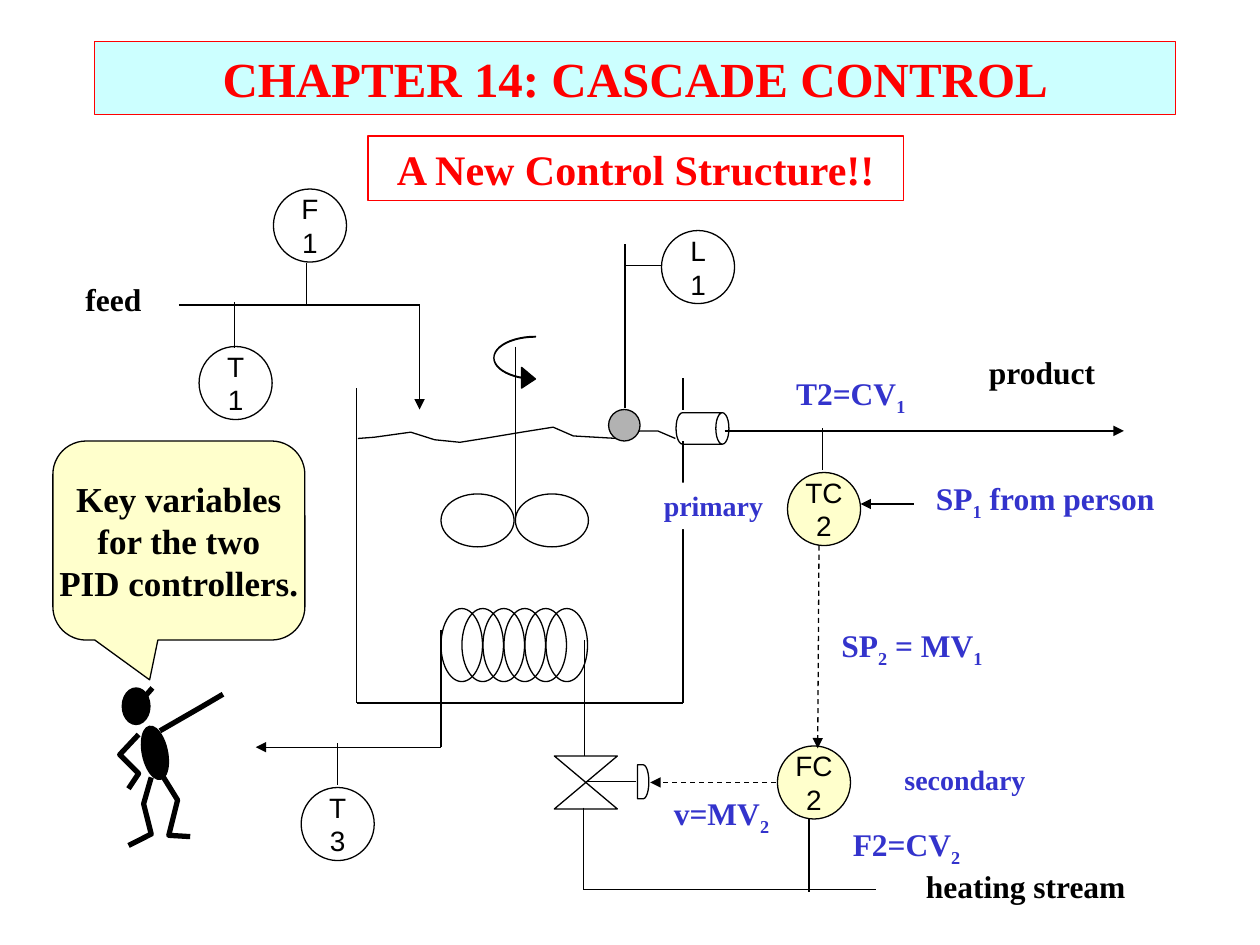
from lxml import etree
from pptx import Presentation
from pptx import util as u
from pptx.dml.color import RGBColor
from pptx.enum import dml, shapes, text
from pptx.oxml import ns

BLACK, RED, BLUE, CREAM, WHITE = "000000", "FF0000", "3333CC", "FFFFCC", "FFFFFF"
SERIF, SANS = "Times New Roman", "Arial"
FORMS = shapes.MSO_SHAPE

TANK = [(2.83, 3.08), (2.83, 5.58), (5.42, 5.58), (5.42, 3.5)]
FEED = [(1.42, 2.42), (3.33, 2.42), (3.33, 3.25)]
COIL_OUTLET = [(3.5, 5), (3.5, 5.93), (2.03, 5.93)]
HEATING = [(4.63, 6.41), (4.63, 7.06), (6.95, 7.06)]
PRODUCT = [(5.75, 3.42), (8.92, 3.42)]
SETPOINT = [(7.25, 4), (6.83, 4)]
LEVEL_TAP = [(5.25, 2.11), (4.96, 2.11)]
VALVE_STEM = [(4.65, 6.2), (5.05, 6.2)]
CASCADE_SIGNAL = [(6.5, 4.33), (6.49, 5.94)]
VALVE_SIGNAL = [(6.16, 6.21), (5.16, 6.21)]
VERTICALS = [(5.42, 3, 3.25), (6.53, 3.4, 3.73), (6.42, 6.5, 7.08), (1.86, 2.4, 2.76),
             (2.43, 2.09, 2.42), (2.68, 5.9, 6.23), (4.96, 1.94, 3.24)]
SURFACE = [(2.84, 3.48), (2.97, 3.47), (3.26, 3.43), (3.45, 3.49), (3.65, 3.51),
           (3.84, 3.48), (4.14, 3.43), (4.39, 3.39), (4.55, 3.46), (4.9, 3.48),
           (5.08, 3.42), (5.22, 3.42), (5.36, 3.48)]
LIMBS = [
    [(1.14, 5.54), (1.21, 5.46)],
    [(1.27, 5.8), (1.6, 5.61), (1.77, 5.51)],
    [(1.1, 5.83), (0.95, 5.99), (1.1, 6.14), (1.02, 6.26)],
    [(1.28, 6.14), (1.41, 6.35), (1.34, 6.63), (1.51, 6.64)],
    [(1.2, 6.17), (1.14, 6.38), (1.2, 6.62), (1.02, 6.71)],
]
INSTRUMENTS = [
    ("TC\n2", 6.25, 3.75, CREAM), ("T\n1", 1.58, 2.75, None), ("F\n1", 2.17, 1.5, None),
    ("FC\n2", 6.17, 5.92, CREAM), ("T\n3", 2.39, 6.25, None), ("L\n1", 5.25, 1.83, None),
]
LABELS = [
    ("feed", 0.58, 2.17, 0.65, BLACK), ("product", 7.75, 2.75, 1.05, BLACK),
    ("heating stream", 7.25, 6.83, 1.79, BLACK),
    ("SP|1| from person", 7.33, 3.75, 1.95, BLUE), ("SP|2| = MV|1", 6.58, 4.92, 1.34, BLUE),
    ("F2=CV|2", 6.67, 6.5, 1.13, BLUE), ("v=MV|2", 5.25, 6.25, 0.97, BLUE),
    ("T2=CV|1", 6.22, 2.92, 1.1, BLUE),
]


def length(units):
    """Convert layout units of 2.54 cm to a length."""
    return u.Cm(2.54 * units)


def color(value):
    """Return the colour for a hex string."""
    return RGBColor.from_string(value)


def paint(shape, fill=None, line=BLACK, weight=0.75):
    """Set fill and outline and switch off the shadow."""
    shape.shadow.inherit = False
    if fill:
        shape.fill.solid()
        shape.fill.fore_color.rgb = color(fill)
    else:
        shape.fill.background()
    if line:
        shape.line.color.rgb = color(line)
        shape.line.width = u.Pt(weight)
    else:
        shape.line.fill.background()


def add_form(canvas, form, left, top, width, height, fill=None, line=BLACK, adjust=()):
    """Add a preset shape."""
    shape = canvas.add_shape(form, *map(length, (left, top, width, height)))
    paint(shape, fill, line)
    for index, value in enumerate(adjust):
        shape.adjustments[index] = value
    return shape


def add_outline(canvas, points, weight=0.75):
    """Add an open freeform through the given points."""
    start, *rest = [(length(x), length(y)) for x, y in points]
    builder = canvas.build_freeform(*start)
    builder.add_line_segments(rest, close=False)
    paint(builder.convert_to_shape(), weight=weight)


def add_line(canvas, start, end, arrow=False, dashed=False):
    """Add a straight connector, optionally dashed or with an arrowhead."""
    connector = canvas.add_connector(shapes.MSO_CONNECTOR.STRAIGHT,
                                     *map(length, (*start, *end)))
    connector.line.color.rgb = color(BLACK)
    connector.line.width = u.Pt(0.75)
    if dashed:
        connector.line.dash_style = dml.MSO_LINE.DASH
    properties = connector._element.spPr
    if arrow:
        outline = properties.find(ns.qn("a:ln"))
        etree.SubElement(outline, ns.qn("a:tailEnd"), type="triangle")
    etree.SubElement(properties, ns.qn("a:effectLst"))


def add_route(canvas, points, arrow=False, dashed=False):
    """Join points by connectors with an optional arrowhead at the end."""
    for start, end in zip(points, points[1:]):
        add_line(canvas, start, end, arrow and end == points[-1], dashed)


def write(shape, content, size=18, font=SERIF, ink=BLACK, bold=True, align="CENTER",
          anchor="MIDDLE", wrap=False):
    """Write lines of text in which parts between bars are subscripts."""
    frame = shape.text_frame
    frame.word_wrap = wrap
    frame.vertical_anchor = text.MSO_ANCHOR[anchor]
    for number, line in enumerate(content.split("\n")):
        paragraph = frame.add_paragraph() if number else frame.paragraphs[0]
        paragraph.alignment = text.PP_ALIGN[align]
        for index, part in enumerate(filter(None, line.split("|"))):
            run = paragraph.add_run()
            run.text = part
            run.font.size, run.font.name, run.font.bold = u.Pt(size), font, bold
            run.font.color.rgb = color(ink)
            if index % 2:
                run._r.get_or_add_rPr().set("baseline", "-25000")


def add_label(canvas, content, left, top, width, ink):
    """Add a free-standing label."""
    box = canvas.add_textbox(*map(length, (left, top, width, 0.4)))
    write(box, content, ink=ink, align="LEFT", anchor="TOP")
    box.text_frame.auto_size = text.MSO_AUTO_SIZE.SHAPE_TO_FIT_TEXT


def add_coil(canvas):
    """Add the heating coil and its inlet."""
    for turn in range(6):
        add_form(canvas, FORMS.OVAL, 3.5 + turn / 6, 4.83, 0.33, 0.58)
    add_line(canvas, (4.64, 5.08), (4.64, 6))


def add_stirrer(canvas):
    """Add the stirrer shaft and blades."""
    add_line(canvas, (4.09, 2.75), (4.09, 4.17))
    for left in (3.5, 4.09):
        add_form(canvas, FORMS.OVAL, left, 3.92, 0.58, 0.42)


def add_valve(canvas):
    """Add the control valve with its actuator."""
    add_form(canvas, FORMS.FLOWCHART_COLLATE, 4.4, 6, 0.5, 0.42)
    add_route(canvas, VALVE_STEM)
    add_form(canvas, FORMS.FLOWCHART_DELAY, 5.06, 6.07, 0.09, 0.27)


def add_pointing_man(canvas):
    """Add the pointing figure."""
    add_form(canvas, FORMS.OVAL, 0.97, 5.46, 0.22, 0.29, BLACK)
    torso = add_form(canvas, FORMS.OVAL, 1.13, 5.76, 0.2, 0.43, BLACK)
    torso.rotation = -12
    for points in LIMBS:
        add_outline(canvas, points, weight=3)


def main():
    """Build the slide."""
    presentation = Presentation()
    presentation.slide_width, presentation.slide_height = u.Cm(25.4), u.Cm(19.05)
    slide = presentation.slides.add_slide(presentation.slide_layouts[6])
    canvas = slide.shapes

    for add_part in (add_coil, add_stirrer, add_valve, add_pointing_man):
        add_part(canvas.add_group_shape().shapes)
    outlet = add_form(canvas, FORMS.CAN, 5.45, 3.19, 0.25, 0.42, adjust=[0.417])
    outlet.rotation = 90
    add_outline(canvas, SURFACE)
    add_form(canvas, FORMS.CURVED_RIGHT_ARROW, 3.92, 2.67, 0.33, 0.42, BLACK,
             adjust=[0.015, 0.5, 0.333])

    for points in (TANK, HEATING, LEVEL_TAP):
        add_route(canvas, points)
    for points in (FEED, COIL_OUTLET, PRODUCT, SETPOINT):
        add_route(canvas, points, arrow=True)
    for x, top, bottom in VERTICALS:
        add_line(canvas, (x, top), (x, bottom))
    add_form(canvas, FORMS.OVAL, 4.83, 3.25, 0.25, 0.25, "B2B2B2")
    for name, left, top, fill in INSTRUMENTS:
        circle = add_form(canvas, FORMS.OVAL, left, top, 0.58, 0.58, fill)
        write(circle, name, size=16, font=SANS, bold=False)
    for points in (CASCADE_SIGNAL, VALVE_SIGNAL):
        add_route(canvas, points, arrow=True, dashed=True)

    callout = add_form(canvas, FORMS.ROUNDED_RECTANGULAR_CALLOUT, 0.42, 3.5, 2, 1.58, CREAM,
                       adjust=[-0.116, 0.7, 0.167])
    write(callout, "Key variables\nfor the two\nPID controllers.", size=20)
    for label in LABELS:
        add_label(canvas, *label)
    title = add_form(canvas, FORMS.RECTANGLE, 0.75, 0.33, 8.58, 0.58, "CCFFFF", RED)
    write(title, "CHAPTER 14: CASCADE CONTROL", size=28, ink=RED, wrap=True)
    subtitle = add_form(canvas, FORMS.RECTANGLE, 2.92, 1.08, 4.25, 0.51, None, RED)
    write(subtitle, "A New Control Structure!!", size=24, ink=RED, wrap=True)
    for name, left, top, width in (("primary", 5.17, 3.83, 1), ("secondary", 7.08, 6, 1.25)):
        loop = add_form(canvas, FORMS.RECTANGLE, left, top, width, 0.37, WHITE, None)
        write(loop, name, size=16, ink=BLUE, align="LEFT", anchor="TOP", wrap=True)
    presentation.save("out.pptx")


if __name__ == "__main__":
    main()
